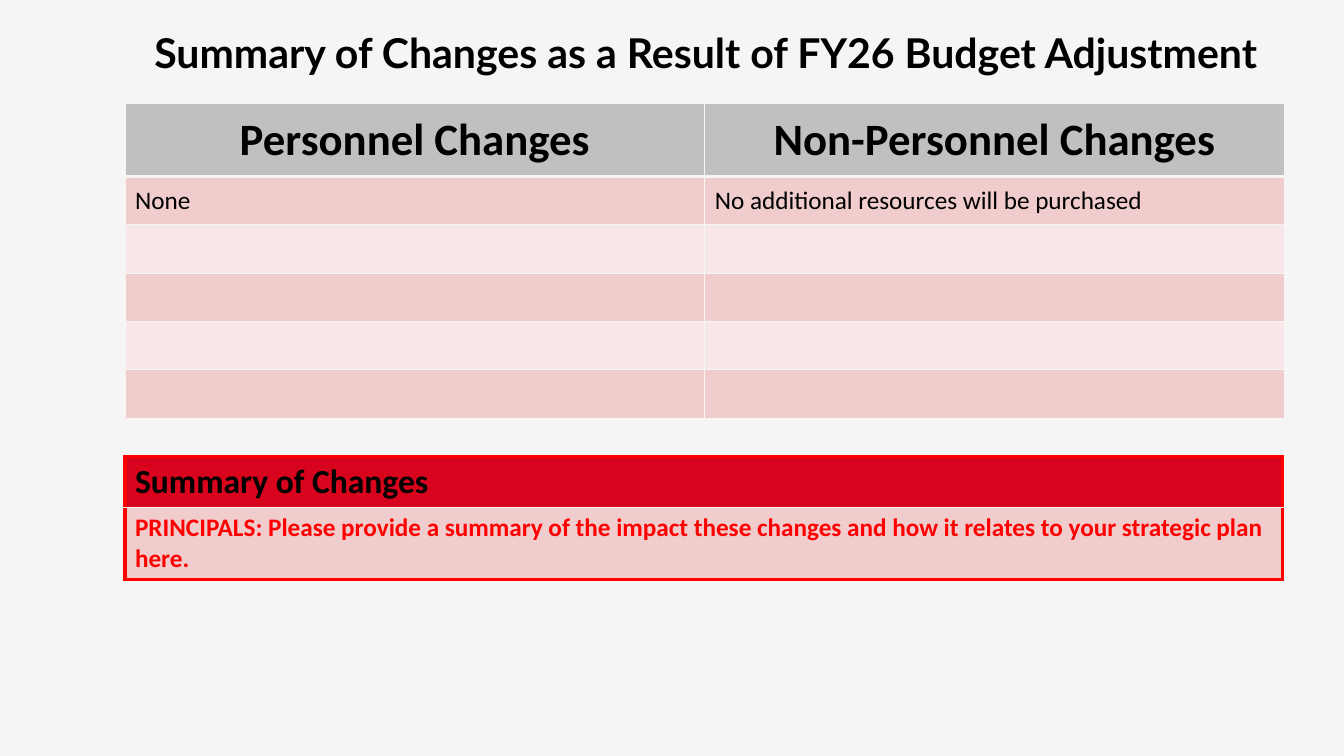
import pptx
import pptx.util
import pptx.dml.color
import pptx.enum.text
import pptx.oxml
import pptx.oxml.ns

RGBColor = pptx.dml.color.RGBColor
PP_ALIGN = pptx.enum.text.PP_ALIGN
MSO_ANCHOR = pptx.enum.text.MSO_ANCHOR

PAPER = RGBColor(0xF5, 0xF5, 0xF5)
BLACK = RGBColor(0x00, 0x00, 0x00)
GREY = RGBColor(0xC0, 0xC0, 0xC0)
ROSE = RGBColor(0xF0, 0xCC, 0xCD)
BLUSH = RGBColor(0xF8, 0xE7, 0xE8)
CRIMSON = RGBColor(0xD8, 0x03, 0x1C)
RED = RGBColor(0xFF, 0x00, 0x00)

deck = pptx.Presentation()
deck.slide_width = pptx.util.Inches(13.33)
deck.slide_height = pptx.util.Inches(7.5)
X = deck.slide_width / 100
Y = deck.slide_height / 100


def write(frame, text, align, size, bold, color, face="Calibri"):
    paragraph = frame.paragraphs[0]
    paragraph.alignment = align
    run = paragraph.add_run()
    run.text = text
    run.font.color.rgb = color
    for key, value in {"size": pptx.util.Pt(size), "bold": bold, "name": face}.items():
        setattr(run.font, key, value)


def paint(cell, fill, borders):
    cell.fill.solid()
    cell.fill.fore_color.rgb = fill
    properties = cell._tc.get_or_add_tcPr()
    for place, side in enumerate("LRTB"):
        color, points = borders[side]
        properties.insert(place, pptx.oxml.parse_xml(
            f'<a:ln{side} {pptx.oxml.ns.nsdecls("a")} w="{pptx.util.Pt(points)}">'
            f'<a:solidFill><a:srgbClr val="{color}"/></a:solidFill></a:ln{side}>'))


slide = deck.slides.add_slide(deck.slide_layouts[5])
slide.background.fill.solid()
slide.background.fill.fore_color.rgb = PAPER

heading = slide.shapes.title
for key, value in {"left": 7.5 * X, "top": 2.93 * Y, "width": 90 * X, "height": 12.27 * Y}.items():
    setattr(heading, key, int(value))
for key, value in {"vertical_anchor": MSO_ANCHOR.TOP, "word_wrap": True,
                   "auto_size": pptx.enum.text.MSO_AUTO_SIZE.NONE}.items():
    setattr(heading.text_frame, key, value)
write(heading.text_frame, "Summary of Changes as a Result of FY26 Budget Adjustment",
      PP_ALIGN.CENTER, 29.3, True, BLACK, "Lato")

THIN = (PAPER, 1)
THICK = (PAPER, 3)
FRAME = (RED, 3)

change_rows = [("Personnel Changes", "Non-Personnel Changes"),
               ("None", "No additional resources will be purchased")] + [("", "")] * 4
change_heights = [9.6] + [6.4] * 5
changes = slide.shapes.add_table(
    len(change_rows), 2, int(9.3 * X), int(13.73 * Y),
    int(86.27 * X), int(sum(change_heights) * Y)).table

summary_rows = [
    ("Summary of Changes", 24, BLACK, CRIMSON, 6.67),
    ("PRINCIPALS: Please provide a summary of the impact these changes "
     "and how it relates to your strategic plan here.", 18, RED, ROSE, 9.33)]
summary = slide.shapes.add_table(
    len(summary_rows), 1, int(9.3 * X), int(60.4 * Y),
    int(86.12 * X), int(16 * Y)).table

for grid in (changes, summary):
    for key, value in {"first_row": False, "horz_banding": False}.items():
        setattr(grid, key, value)

for r, (texts, height) in enumerate(zip(change_rows, change_heights)):
    changes.rows[r].height = int(height * Y)
    header = r == 0
    fill = GREY if header else (ROSE if r % 2 else BLUSH)
    borders = {"L": THIN, "R": THIN, "T": THICK if r == 1 else THIN,
               "B": THICK if header else THIN}
    for c, text in enumerate(texts):
        cell = changes.cell(r, c)
        cell.vertical_anchor = MSO_ANCHOR.MIDDLE
        paint(cell, fill, borders)
        if text:
            write(cell.text_frame, text, PP_ALIGN.CENTER if header else PP_ALIGN.LEFT,
                  32 if header else 18, header, BLACK)

for r, (text, size, color, fill, height) in enumerate(summary_rows):
    summary.rows[r].height = int(height * Y)
    paint(summary.cell(r, 0), fill,
          {"L": FRAME, "R": FRAME, "T": THIN if r else FRAME, "B": FRAME if r else THIN})
    write(summary.cell(r, 0).text_frame, text, PP_ALIGN.LEFT, size, True, color)

deck.save("out.pptx")
